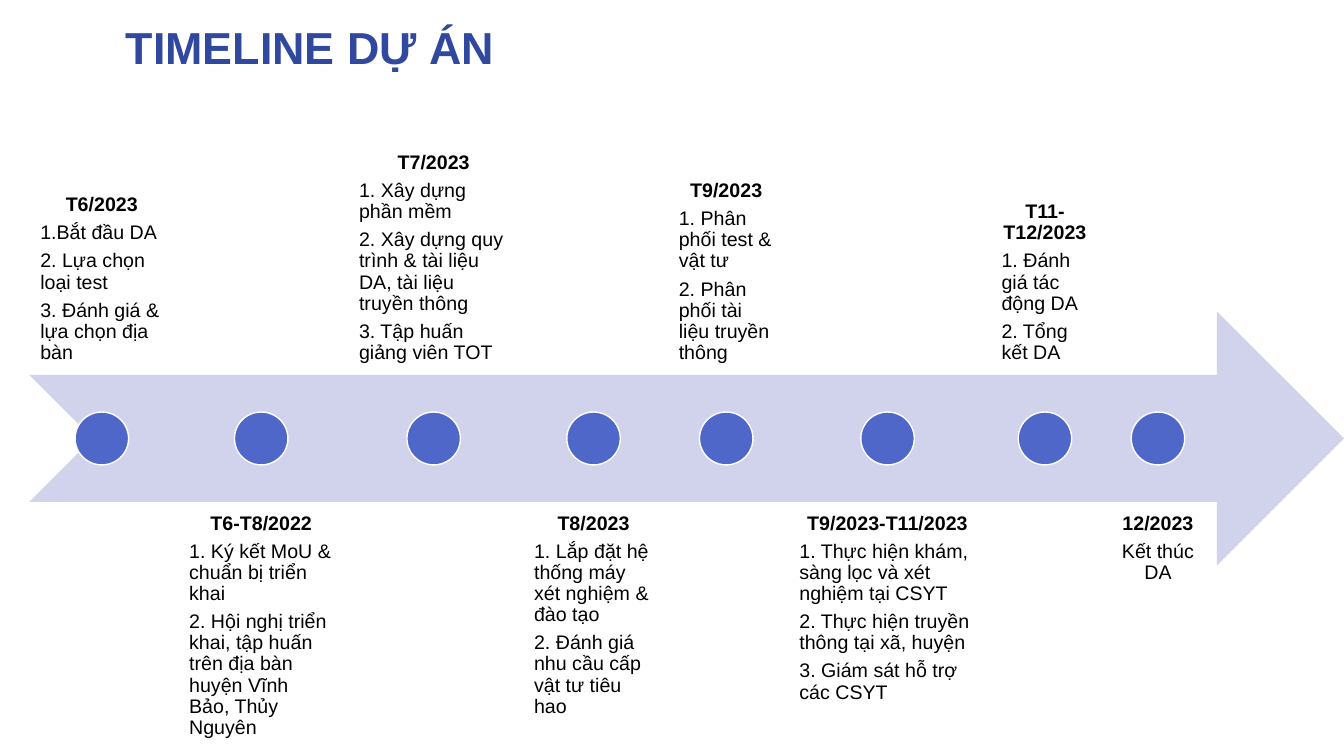
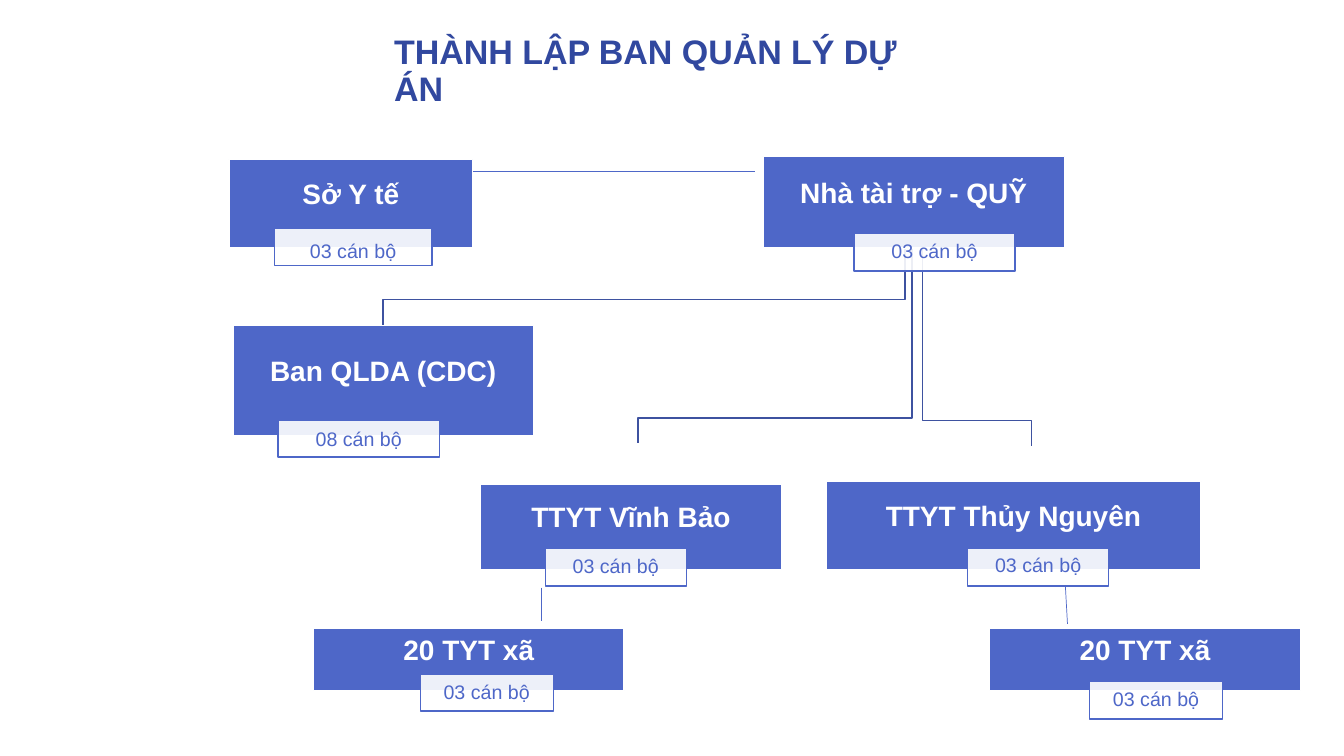
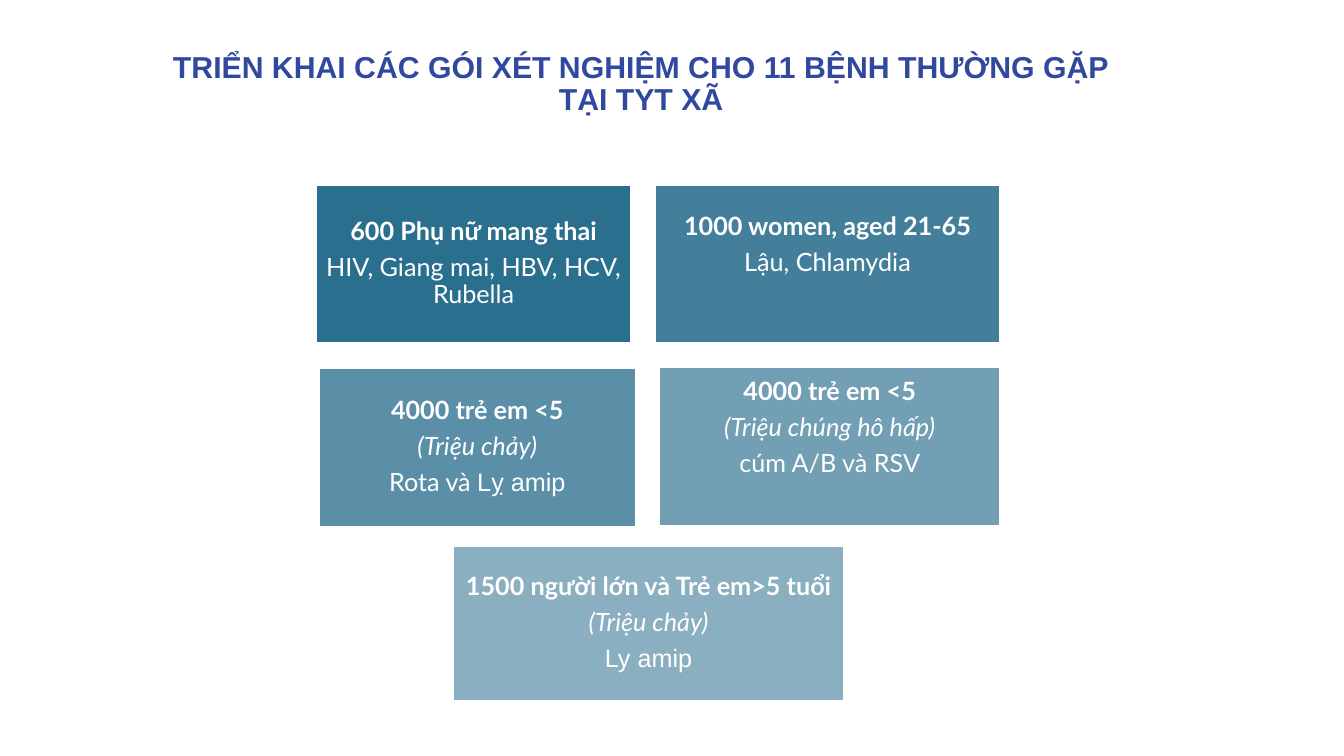
from lxml import etree
from pptx import Presentation
from pptx.dml.color import RGBColor
from pptx.enum.shapes import MSO_CONNECTOR, MSO_SHAPE
from pptx.enum.text import MSO_ANCHOR, PP_ALIGN
from pptx.oxml.ns import qn
from pptx.util import Pt

LEFT, CENTER = PP_ALIGN.LEFT, PP_ALIGN.CENTER
TOP, MIDDLE, BOTTOM = MSO_ANCHOR.TOP, MSO_ANCHOR.MIDDLE, MSO_ANCHOR.BOTTOM
RECT, OVAL, ARROW = MSO_SHAPE.RECTANGLE, MSO_SHAPE.OVAL, MSO_SHAPE.NOTCHED_RIGHT_ARROW

COLORS = {
    "title": "31489F", "blue": "4E67C8", "band": "D0D3EB", "elbow": "3E52A0",
    "teal": "156082", "white": "FFFFFF", "black": "000000",
}
SPACE_AFTER = 0.35  # share of the text size

# Timeline: column width, heading, entries
MILESTONES = [
    (103.7, "T6/2023", ["1.Bắt đầu DA", "2. Lựa chọn loại test",
                        "3. Đánh giá & lựa chọn địa bàn"]),
    (118.8, "T6-T8/2022", ["1. Ký kết MoU & chuẩn bị triển khai",
                           "2. Hội nghị triển khai, tập huấn trên địa bàn huyện "
                           "Vĩnh Bảo, Thủy Nguyên"]),
    (122.4, "T7/2023", ["1. Xây dựng phần mềm",
                        "2. Xây dựng quy trình & tài liệu DA, tài liệu truyền thông",
                        "3. Tập huấn giảng viên TOT"]),
    (100.8, "T8/2023", ["1. Lắp đặt hệ thống máy xét nghiệm & đào tạo",
                        "2. Đánh giá nhu cầu cấp vật tư tiêu hao"]),
    (83.5, "T9/2023", ["1. Phân phối test & vật tư",
                       "2. Phân phối tài liệu truyền thông"]),
    (141.8, "T9/2023-T11/2023", ["1. Thực hiện khám, sàng lọc và xét nghiệm tại CSYT",
                                 "2. Thực hiện truyền thông tại xã, huyện",
                                 "3. Giám sát hỗ trợ các CSYT"]),
    (77.8, "T11-T12/2023", ["1. Đánh giá tác động DA", "2. Tổng kết DA"]),
    (78.5, "12/2023", ["Kết thúc DA"]),
]

# Organisation: name, box, staff, badge (left, top, width), text drop in the badge
UNITS = [
    ("Nhà tài trợ - QUỸ", (545, 111.6, 215.5, 65.5), "03 cán bộ", (610, 167, 115.2), 0),
    ("Ban QLDA (CDC)", (166.5, 232.5, 214.5, 79), "08 cán bộ", (198.7, 300, 115.2), 2),
    ("TTYT Vĩnh Bảo", (343.2, 345.6, 215.2, 61.2), "03 cán bộ", (389.5, 392, 100.8), 0),
    ("TTYT Thủy Nguyên", (590, 344, 268, 62.8), "03 cán bộ", (691.2, 392, 100.8), -2),
    ("Sở Y tế", (163.5, 113.8, 174.2, 63.3), "03 cán bộ", (196, 163, 112.5), 8),
    ("20 TYT xã", (224, 448.6, 221.8, 44.6), "03 cán bộ", (300.2, 481.5, 95), 0),
    ("20 TYT xã", (707, 448.6, 221.8, 44.6), "03 cán bộ", (778.3, 487, 95), 0),
]
BADGE_H = 26.5
ELBOW_TOP = 177
ELBOWS = [(659, 300.5, 737, 318.5), (651.5, 298.5, 455.8, 316.5), (646.5, 213.8, 273.5, 232)]
LINKS = [(337.7, 122.4, 539.3, 122.4), (386.6, 419.8, 386.6, 443.5),
         (761, 418.5, 762.5, 445.7)]

# Test packages: box, opacity %, extra bottom inset, heading, note, tests as (text, font)
PACKAGES = [
    ((226, 131.8, 224.6, 113.5), 90, 0, "600 Phụ nữ mang thai", None,
     [("HIV, Giang mai, HBV, HCV, Rubella", "Lato")]),
    ((468, 131.8, 246.2, 113.5), 80, 26, "1000 women, aged 21-65", None,
     [("Lậu, Chlamydia", "Lato")]),
    ((227.5, 262.8, 226.8, 113.5), 70, 0, "4000 trẻ em <5", "(Triệu chảy)",
     [("Rota và ", "Lato"), ("Lỵ amip", "Arial")]),
    ((471, 262, 243.3, 113.5), 60, 26, "4000 trẻ em <5", "(Triệu chúng hô hấp)",
     [("cúm A/B và RSV", "Lato")]),
    ((323.3, 389.8, 280, 110.9), 50, 0, "1500 người lớn và Trẻ em>5 tuổi", "(Triệu chảy)",
     [("Ly amip", "Arial")]),
]


def rgb(name):
    return RGBColor.from_string(COLORS[name])


def add_text(tf, text, size=14, color="black", bold=False, italic=False, font="Arial",
             align=LEFT, spacing=0.9, after=SPACE_AFTER, join=False):
    """Add a paragraph, or a run to the last one when join is set."""
    p = tf.paragraphs[-1]
    if p.runs and not join:
        p = tf.add_paragraph()
    p.alignment, p.line_spacing, p.space_after = align, spacing, Pt(size * after)
    for i, line in enumerate(text.split("\n")):
        if i:
            p.add_line_break()
        r = p.add_run()
        r.text = line
        r.font.name, r.font.size = font, Pt(size)
        r.font.bold, r.font.italic = bold, italic
        r.font.color.rgb = rgb(color)


def set_frame(sp, anchor, insets):
    tf = sp.text_frame
    tf.word_wrap, tf.vertical_anchor = True, anchor
    tf.margin_left, tf.margin_top, tf.margin_right, tf.margin_bottom = map(Pt, insets)
    return tf


def add_box(s, box, anchor=TOP, insets=(7.2, 3.6, 7.2, 3.6)):
    return set_frame(s.shapes.add_textbox(*map(Pt, box)), anchor, insets)


def add_block(s, kind, box, fill, line=None, width=1, opacity=100):
    sp = s.shapes.add_shape(kind, *map(Pt, box))
    sp.shadow.inherit = False
    sp.fill.solid()
    sp.fill.fore_color.rgb = rgb(fill)
    if opacity < 100:
        clr = sp.fill._xPr.find(qn("a:solidFill"))[0]
        etree.SubElement(clr, qn("a:alpha")).set("val", str(opacity * 1000))
    if line:
        sp.line.color.rgb, sp.line.width = rgb(line), Pt(width)
    else:
        sp.line.fill.background()
    return sp


def add_slide(prs, title, box, size, **fmt):
    s = prs.slides.add_slide(prs.slide_layouts[6])
    tf = add_box(s, box, fmt.pop("anchor", MIDDLE))
    add_text(tf, title, size=size, color="title", bold=True, after=0, **fmt)
    return s


def timeline(prs):
    s = add_slide(prs, "TIMELINE DỰ ÁN", (82.8, 10.8, 653, 41.8), 32,
                  anchor=TOP, spacing=1.0)
    left, gap, dot_w, dot_h = 20.9, 2.6, 38.2, 37.8
    band_top, band_h = 222.5, 181.4
    add_block(s, ARROW, (left, band_top, 939.1, band_h), "band")
    for i, (width, heading, entries) in enumerate(MILESTONES):
        top, anchor = (358.6, TOP) if i % 2 else (86.4, BOTTOM)
        tf = add_box(s, (left, top, width, band_h), anchor, (7.9,) * 4)
        add_text(tf, heading, bold=True, align=CENTER)
        for entry in entries:
            add_text(tf, entry, align=CENTER if len(entries) == 1 else LEFT)
        add_block(s, OVAL, (left + (width - dot_w) / 2, band_top + (band_h - dot_h) / 2,
                            dot_w, dot_h), "blue", "white")
        left += width + gap


def organisation(prs):
    s = add_slide(prs, "THÀNH LẬP BAN QUẢN LÝ DỰ ÁN", (274.5, 22, 412.5, 59), 24.3)
    # Elbow lines behind the boxes
    for trunk_x, turn_y, end_x, end_y in ELBOWS:
        fb = s.shapes.build_freeform(Pt(trunk_x), Pt(ELBOW_TOP))
        fb.add_line_segments([(Pt(trunk_x), Pt(turn_y)), (Pt(end_x), Pt(turn_y)),
                              (Pt(end_x), Pt(end_y))], close=False)
        sp = fb.convert_to_shape()
        sp.shadow.inherit = False
        sp.fill.background()
        sp.line.color.rgb, sp.line.width = rgb("elbow"), Pt(1)
    # Units with staff badges
    for name, box, staff, (x, y, w), drop in UNITS:
        sp = add_block(s, RECT, box, "blue", "white")
        tf = set_frame(sp, MIDDLE, (1.4, 1.4, 1.4, 13))
        add_text(tf, name, size=20, color="white", bold=True, align=CENTER, after=0)
        sp = add_block(s, RECT, (x, y, w, BADGE_H), "white", "blue", opacity=90)
        tf = set_frame(sp, MIDDLE, (5, max(drop, 0), 5, max(-drop, 0)))
        add_text(tf, staff, color="blue", align=CENTER, after=0)
    # Thin straight links
    for link in LINKS:
        cn = s.shapes.add_connector(MSO_CONNECTOR.STRAIGHT, *map(Pt, link))
        cn.line.color.rgb, cn.line.width = rgb("blue"), Pt(0.5)
        etree.SubElement(cn._element.spPr, qn("a:effectLst"))


def packages(prs):
    s = add_slide(prs, "TRIỂN KHAI CÁC GÓI XÉT NGHIỆM CHO 11 BỆNH THƯỜNG GẶP\nTẠI TYT XÃ",
                  (62, 31, 792, 59), 21.6, align=CENTER)
    fmt = {"size": 18, "color": "white", "align": CENTER}
    for box, opacity, extra, heading, note, tests in PACKAGES:
        sp = add_block(s, RECT, box, "teal", "white", 1.5, opacity)
        tf = set_frame(sp, MIDDLE, (5, 5, 5, 5 + extra))
        add_text(tf, heading, bold=True, font="Lato", **fmt)
        if note:
            add_text(tf, note, italic=True, font="Lato", **fmt)
        for i, (text, font) in enumerate(tests):
            add_text(tf, text, font=font, join=i > 0, **fmt)


def main():
    prs = Presentation()
    prs.slide_width, prs.slide_height = Pt(960), Pt(540)
    timeline(prs)
    organisation(prs)
    packages(prs)
    prs.save("out.pptx")


if __name__ == "__main__":
    main()
